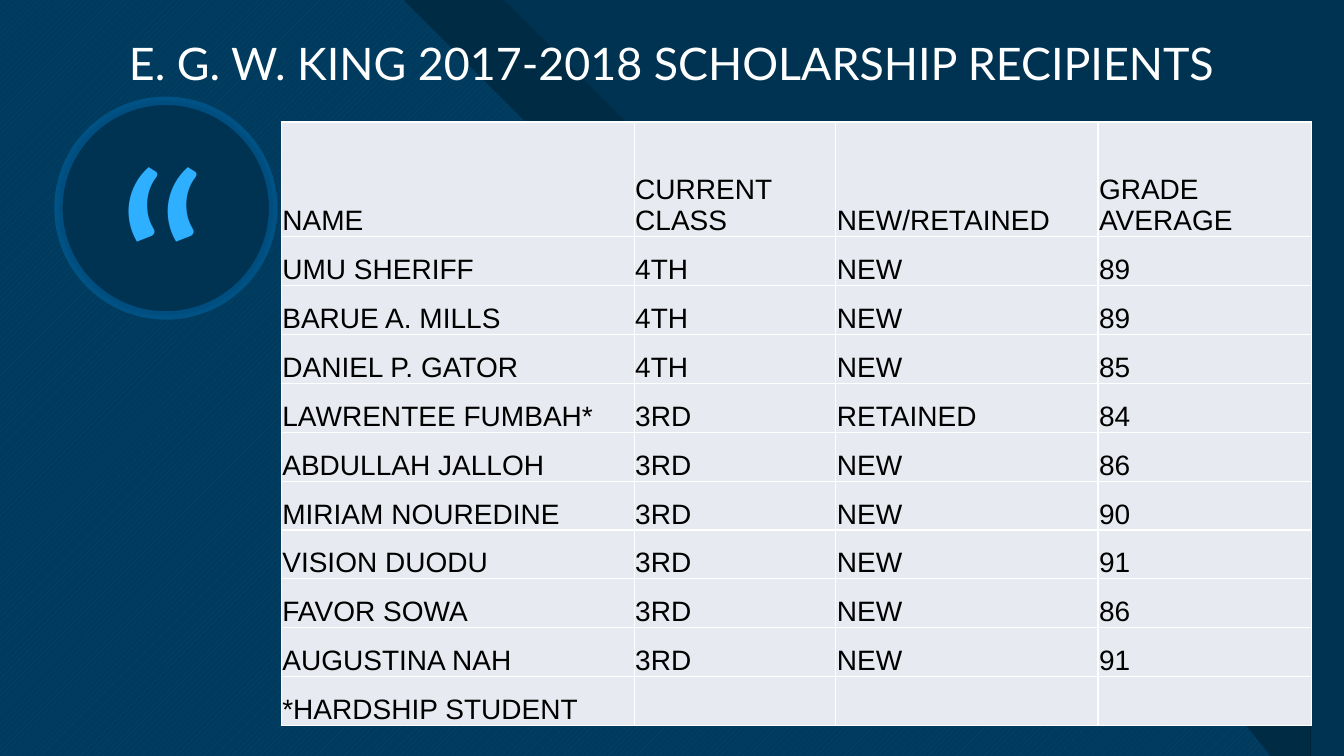
from dataclasses import dataclass

from lxml.etree import SubElement
from pptx import Presentation
from pptx.dml.color import RGBColor
from pptx.enum.dml import MSO_PATTERN as Pattern
from pptx.enum.shapes import MSO_SHAPE as Shape
from pptx.enum.text import MSO_ANCHOR as Anchor, PP_ALIGN as Align
from pptx.oxml.ns import qn
from pptx.shapes.autoshape import Shape as AutoShape
from pptx.slide import Slide
from pptx.table import _Cell as Cell
from pptx.util import Inches, Pt

WIDTH, HEIGHT = 13.33, 7.5
COLORS = {
    "navy": "003352",
    "black": "000000",
    "teal": "47C3D3",
    "blue": "0065A4",
    "bright": "2FAFFF",
    "white": "FFFFFF",
    "cell": "E7EAF0",
}


@dataclass
class Backdrop:
    points: list[tuple[float, float]]
    color: str
    stripes: str | None = None
    opacity: int = 100


@dataclass
class Caption:
    text: str
    box: tuple[float, float, float, float]
    size: int
    color: str
    wrap: bool = True


BACKDROPS = [
    Backdrop([(0.42, 0), (4.9, 0), (7.88, 2.97), (9.14, 2.97), (WIDTH, 7.17),
              (WIDTH, HEIGHT), (0.42, HEIGHT)], "black"),
    Backdrop([(0, 0), (4.49, 0), (7.46, 2.97), (8.72, 2.97), (13.25, HEIGHT),
              (0, HEIGHT)], "blue", stripes="teal"),
    Backdrop([(0, 0), (6.95, 0), (9.92, 2.97), (11.18, 2.97), (WIDTH, 5.13),
              (WIDTH, HEIGHT), (0, HEIGHT)], "navy", opacity=85),
]
CAPTIONS = [
    Caption("“", (1.05, 1.01, 1.1, 3.13), 184, "bright", wrap=False),
    Caption("E. G. W. KING 2017-2018 SCHOLARSHIP RECIPIENTS",
            (0.52, 0.3, 12.29, 5.52), 32, "white"),
]
RECIPIENTS = [
    ("NAME", "CURRENT CLASS", "NEW/RETAINED", "GRADE AVERAGE"),
    ("UMU SHERIFF", "4TH", "NEW", "89"),
    ("BARUE A. MILLS", "4TH", "NEW", "89"),
    ("DANIEL P. GATOR", "4TH", "NEW", "85"),
    ("LAWRENTEE FUMBAH*", "3RD", "RETAINED", "84"),
    ("ABDULLAH JALLOH", "3RD", "NEW", "86"),
    ("MIRIAM NOUREDINE", "3RD", "NEW", "90"),
    ("VISION DUODU", "3RD", "NEW", "91"),
    ("FAVOR SOWA", "3RD", "NEW", "86"),
    ("AUGUSTINA NAH", "3RD", "NEW", "91"),
    ("*HARDSHIP STUDENT", "", "", ""),
]
COLUMN_WIDTHS = [3.5, 2, 2.6, 2.12]
TABLE_HEIGHT, HEADER_HEIGHT = 5.99, 1.14


def rgb(name: str) -> RGBColor:
    return RGBColor.from_string(COLORS[name])


def set_opacity(shape: AutoShape, part: str, percent: int) -> None:
    color = shape._element.spPr.find(f"{part}/{qn('a:srgbClr')}")
    SubElement(color, qn("a:alpha"), val=str(percent * 1000))


def draw_backdrop(slide: Slide, backdrop: Backdrop) -> None:
    start, *rest = backdrop.points
    builder = slide.shapes.build_freeform(*start, scale=Inches(1))
    builder.add_line_segments(rest, close=True)
    shape = builder.convert_to_shape()
    shape.shadow.inherit = False
    shape.line.fill.background()
    if backdrop.stripes:
        shape.fill.patterned()
        shape.fill.pattern = Pattern.WIDE_UPWARD_DIAGONAL
        shape.fill.fore_color.rgb = rgb(backdrop.stripes)
        shape.fill.back_color.rgb = rgb(backdrop.color)
    else:
        shape.fill.solid()
        shape.fill.fore_color.rgb = rgb(backdrop.color)
    if backdrop.opacity < 100:
        set_opacity(shape, qn("a:solidFill"), backdrop.opacity)


def draw_quote_ring(slide: Slide) -> None:
    ring = slide.shapes.add_shape(
        Shape.OVAL, Inches(0.58), Inches(1), Inches(2.13), Inches(2.13))
    ring.shadow.inherit = False
    ring.fill.solid()
    ring.fill.fore_color.rgb = rgb("navy")
    ring.line.color.rgb = rgb("blue")
    ring.line.width = Pt(6)
    set_opacity(ring, f"{qn('a:ln')}/{qn('a:solidFill')}", 55)


def draw_caption(slide: Slide, caption: Caption) -> None:
    frame = slide.shapes.add_textbox(*map(Inches, caption.box)).text_frame
    frame.word_wrap = caption.wrap
    paragraph = frame.paragraphs[0]
    paragraph.text = caption.text
    paragraph.alignment = Align.CENTER
    paragraph.font.name = "Lato"
    paragraph.font.size = Pt(caption.size)
    paragraph.font.color.rgb = rgb(caption.color)


def add_borders(cell: Cell) -> None:
    properties = cell._tc.get_or_add_tcPr()
    for index, side in enumerate(("lnL", "lnR", "lnT", "lnB")):
        border = SubElement(properties, qn(f"a:{side}"), w=str(Pt(1)))
        fill = SubElement(border, qn("a:solidFill"))
        SubElement(fill, qn("a:srgbClr"), val=COLORS["white"])
        properties.insert(index, border)


def fill_cell(cell: Cell, text: str) -> None:
    cell.margin_left = cell.margin_right = cell.margin_top = Inches(0.01)
    cell.margin_bottom = 0
    cell.vertical_anchor = Anchor.BOTTOM
    cell.fill.solid()
    cell.fill.fore_color.rgb = rgb("cell")
    add_borders(cell)
    paragraph = cell.text_frame.paragraphs[0]
    paragraph.text = text
    paragraph.font.name = "Arial"
    paragraph.font.size = Pt(20)
    paragraph.font.bold = False
    paragraph.font.color.rgb = rgb("black")


def draw_recipients(slide: Slide) -> None:
    table = slide.shapes.add_table(
        len(RECIPIENTS), len(COLUMN_WIDTHS), Inches(2.79), Inches(1.21),
        Inches(sum(COLUMN_WIDTHS)), Inches(TABLE_HEIGHT)).table
    table.horz_banding = False
    for column, width in zip(table.columns, COLUMN_WIDTHS):
        column.width = Inches(width)
    row_height = (TABLE_HEIGHT - HEADER_HEIGHT) / (len(RECIPIENTS) - 1)
    for index, (row, recipient) in enumerate(zip(table.rows, RECIPIENTS)):
        row.height = Inches(row_height if index else HEADER_HEIGHT)
        for cell, text in zip(row.cells, recipient):
            fill_cell(cell, text)


def main() -> None:
    deck = Presentation()
    deck.slide_width, deck.slide_height = Inches(WIDTH), Inches(HEIGHT)
    slide = deck.slides.add_slide(deck.slide_layouts[6])

    # Navy background with diagonal bands
    slide.background.fill.solid()
    slide.background.fill.fore_color.rgb = rgb("navy")
    for backdrop in BACKDROPS:
        draw_backdrop(slide, backdrop)

    # Quote mark and title
    draw_quote_ring(slide)
    for caption in CAPTIONS:
        draw_caption(slide, caption)

    # Scholarship table
    draw_recipients(slide)
    deck.save("out.pptx")


if __name__ == "__main__":
    main()
